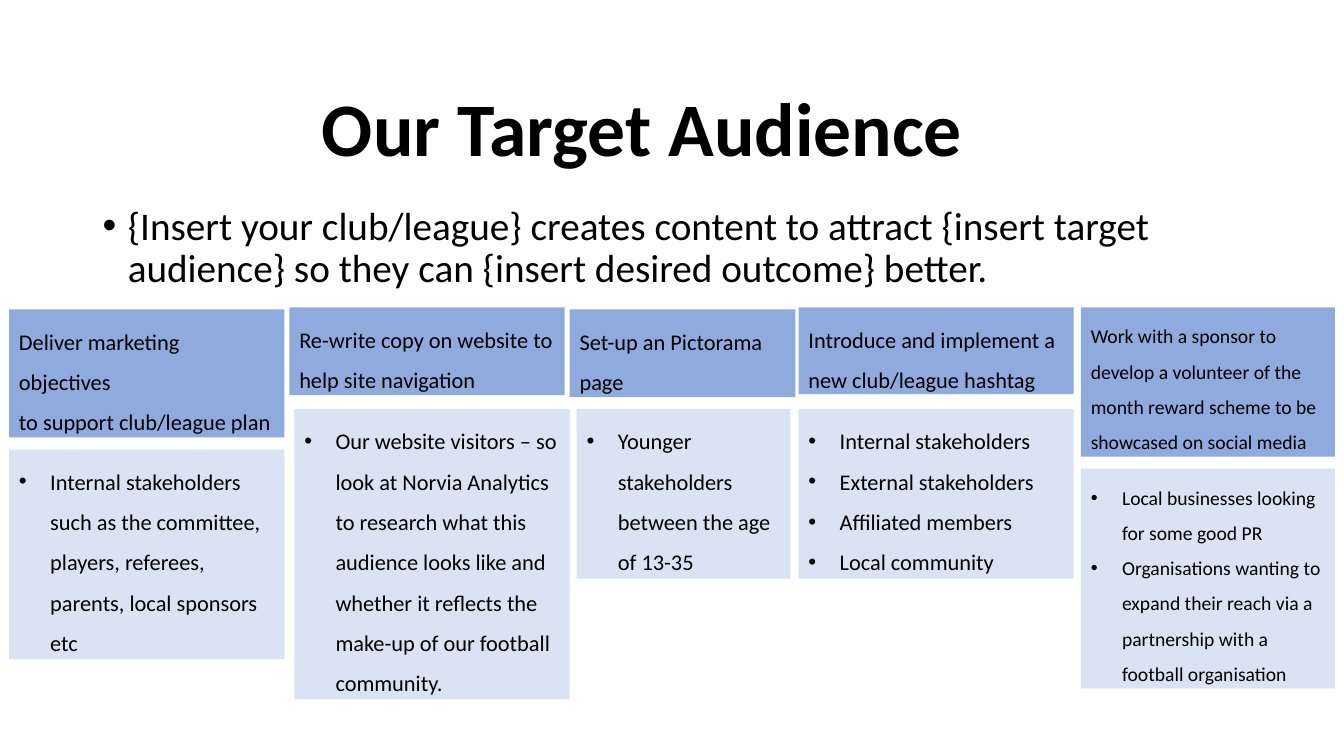
from lxml import etree
from pptx import Presentation
from pptx.dml.color import RGBColor
from pptx.enum import shapes, text
from pptx.oxml import ns
from pptx.util import Inches, Pt

COLORS = {"ink": "000000", "activity": "8FAADC", "audience": "DAE3F3"}
FONT = "Calibri"

COLUMNS = [
    {"size": 16,
     "activity": ((0.09, 3.07, 2.73, 1.27),
                  ["Deliver marketing objectives", "to support club/league plan"]),
     "audience": ((0.09, 4.46, 2.73, 2.08),
                  ["Internal stakeholders such as the committee, players, referees, "
                   "parents, local sponsors etc"])},
    {"size": 16,
     "activity": ((2.87, 3.05, 2.73, 0.87),
                  ["Re-write copy on website to help site navigation"]),
     "audience": ((2.92, 4.06, 2.73, 2.88),
                  ["Our website visitors – so look at Norvia Analytics to research what "
                   "this audience looks like and whether it reflects the make-up of our "
                   "football community."])},
    {"size": 16,
     "activity": ((5.65, 3.07, 2.24, 0.87), ["Set-up an Pictorama page"]),
     "audience": ((5.72, 4.06, 2.12, 1.68),
                  ["Younger stakeholders between the age of 13-35"])},
    {"size": 16,
     "activity": ((7.92, 3.05, 2.73, 0.86),
                  ["Introduce and implement a new club/league hashtag"]),
     "audience": ((7.92, 4.06, 2.73, 1.68),
                  ["Internal stakeholders", "External stakeholders",
                   "Affiliated members", "Local community"])},
    {"size": 14,
     "activity": ((10.72, 3.05, 2.52, 1.48),
                  ["Work with a sponsor to develop a volunteer of the month reward "
                   "scheme to be showcased on social media"]),
     "audience": ((10.72, 4.65, 2.52, 2.18),
                  ["Local businesses looking for some good PR",
                   "Organisations wanting to expand their reach via a partnership "
                   "with a football organisation"])},
]


def style_paragraph(paragraph, size, spacing, align=text.PP_ALIGN.LEFT, bold=False):
    paragraph.alignment = align
    paragraph.line_spacing = spacing
    paragraph.font.name = FONT
    paragraph.font.size = Pt(size)
    paragraph.font.bold = bold
    paragraph.font.color.rgb = RGBColor.from_string(COLORS["ink"])


def add_bullet(paragraph, indent):
    properties = paragraph._p.get_or_add_pPr()
    properties.set("marL", str(Inches(indent)))
    properties.set("indent", str(-Inches(indent)))
    bullet_font = etree.Element(ns.qn("a:buFont"), typeface="Arial")
    bullet = etree.Element(ns.qn("a:buChar"), char="•")
    defaults = properties.find(ns.qn("a:defRPr"))
    defaults.addprevious(bullet_font)
    defaults.addprevious(bullet)


def set_title(slide, wording):
    title = slide.shapes.title
    title.left, title.top = Inches(1.77), Inches(0)
    title.width, title.height = Inches(10), Inches(2.61)
    frame = title.text_frame
    frame.text = wording
    frame.auto_size = text.MSO_AUTO_SIZE.NONE
    frame.vertical_anchor = text.MSO_ANCHOR.MIDDLE
    frame.margin_right = Inches(0.9)
    style_paragraph(frame.paragraphs[0], 54, 0.9, text.PP_ALIGN.CENTER, bold=True)


def add_statement(slide, wording):
    box = slide.shapes.add_textbox(Inches(0.92), Inches(2), Inches(11.5), Inches(1.11))
    frame = box.text_frame
    frame.word_wrap = True
    frame.text = wording
    paragraph = frame.paragraphs[0]
    style_paragraph(paragraph, 28, 0.9)
    paragraph.space_before = Pt(10)
    add_bullet(paragraph, 0.25)


def add_card(slide, bounds, lines, size, fill, bulleted):
    card = slide.shapes.add_shape(
        shapes.MSO_SHAPE.RECTANGLE, *(Inches(length) for length in bounds))
    card.shadow.inherit = False
    card.fill.solid()
    card.fill.fore_color.rgb = RGBColor.from_string(COLORS[fill])
    card.line.fill.background()
    frame = card.text_frame
    frame.word_wrap = True
    frame.auto_size = text.MSO_AUTO_SIZE.SHAPE_TO_FIT_TEXT
    frame.vertical_anchor = text.MSO_ANCHOR.TOP
    frame.text = "\n".join(lines)
    for paragraph in frame.paragraphs:
        style_paragraph(paragraph, size, 1.5)
        if bulleted:
            add_bullet(paragraph, 0.31)


def main():
    deck = Presentation()
    deck.slide_width, deck.slide_height = Inches(13.33), Inches(7.5)
    slide = deck.slides.add_slide(deck.slide_layouts.get_by_name("Title Only"))
    set_title(slide, "Our Target Audience")
    add_statement(slide, "{Insert your club/league} creates content to attract {insert "
                         "target audience} so they can {insert desired outcome} better.")
    for kind in ("activity", "audience"):
        for column in COLUMNS:
            bounds, lines = column[kind]
            add_card(slide, bounds, lines, column["size"], kind, kind == "audience")
    deck.save("out.pptx")


if __name__ == "__main__":
    main()
